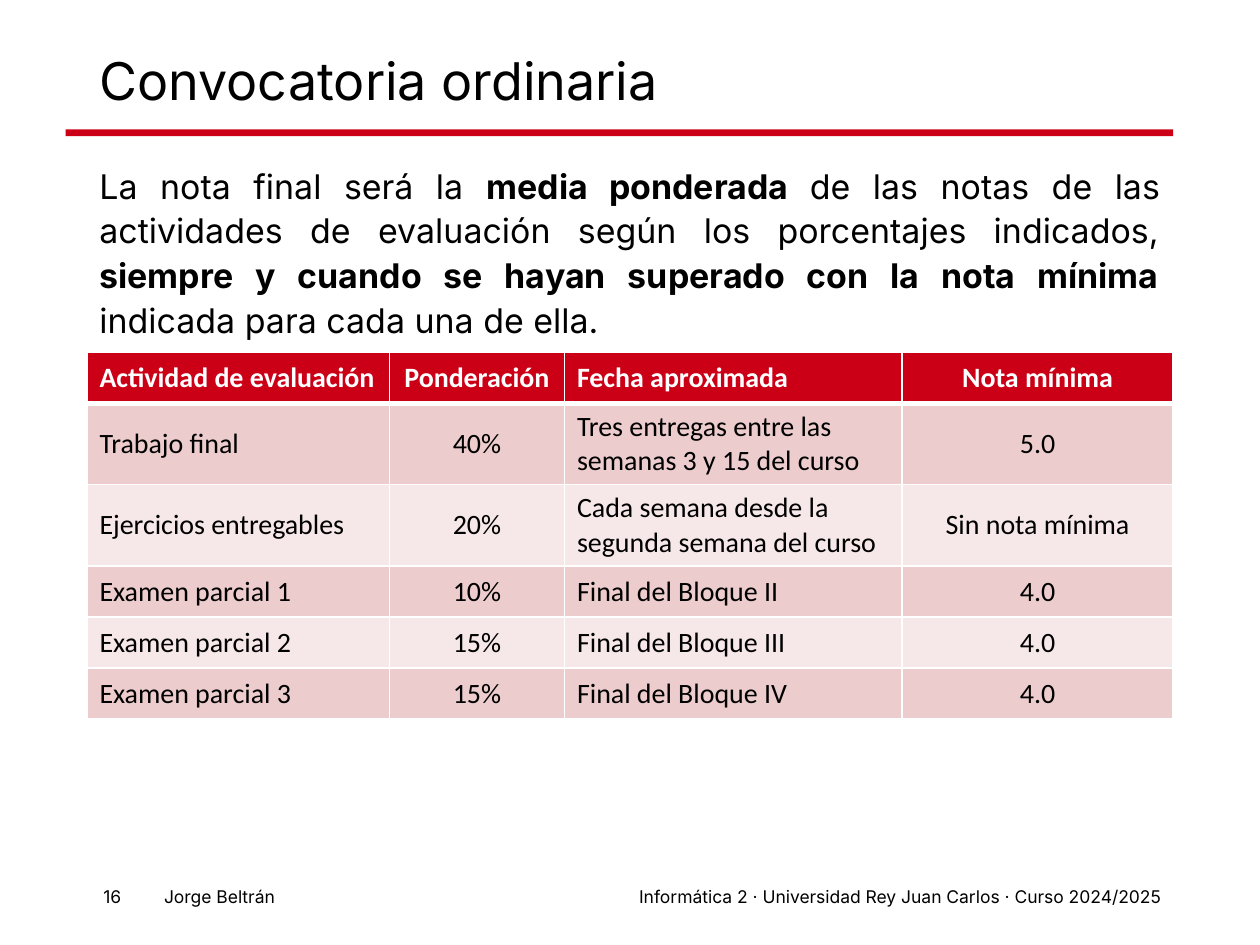
from lxml import etree
from pptx import Presentation
from pptx.dml.color import RGBColor
from pptx.enum.shapes import MSO_SHAPE
from pptx.enum.text import MSO_ANCHOR, PP_ALIGN
from pptx.oxml.ns import qn
from pptx.util import Inches, Pt

LEFT, CENTER, RIGHT, JUSTIFY = PP_ALIGN.LEFT, PP_ALIGN.CENTER, PP_ALIGN.RIGHT, PP_ALIGN.JUSTIFY
TOP, MIDDLE = MSO_ANCHOR.TOP, MSO_ANCHOR.MIDDLE
RECTANGLE = MSO_SHAPE.RECTANGLE
RED, BLACK, WHITE = "CB0017", "000000", "FFFFFF"
BANDS = ["ECCCCC", "F6E7E8"]

deck = Presentation()
deck.slide_width, deck.slide_height = Inches(10), Inches(7.5)
slide = deck.slides.add_slide(deck.slide_layouts[6])
col, row = deck.slide_width / 100, deck.slide_height / 100
margin, content = 6.9, 86.2


def color(hex_code):
    return RGBColor.from_string(hex_code)


def write(frame, text, size=10, font="Inter", ink=BLACK, bold=False,
          align=LEFT, anchor=TOP, spacing=1.0, before=0):
    frame.word_wrap = True
    frame.vertical_anchor = anchor
    paragraph = frame.paragraphs[0]
    paragraph.alignment = align
    paragraph.line_spacing = spacing
    paragraph.space_before = Pt(before)
    for index, piece in enumerate(text.split("**")):
        if piece:
            run = paragraph.add_run()
            run.text = piece
            run.font.size, run.font.name = Pt(size), font
            run.font.bold = bold or index % 2 == 1
            run.font.color.rgb = color(ink)


rule = slide.shapes.add_shape(RECTANGLE, int(5.2 * col), int(13.7 * row), int(87.9 * col), int(0.7 * row))
rule.shadow.inherit = False
rule.fill.solid()
rule.fill.fore_color.rgb = color(RED)
rule.line.fill.background()

explanation = (
    "La nota final será la **media ponderada **de las notas de las actividades de evaluación "
    "según los porcentajes indicados, **siempre y cuando se hayan superado con la nota mínima "
    "**indicada para cada una de ella. "
)
footer = dict(top=93.1, height=3.6, align=RIGHT)
passages = [
    dict(text="Informática 2 · Universidad Rey Juan Carlos · Curso 2024/2025", left=25.3, width=67.8, **footer),
    dict(text="16", left=5.8, width=4.8, **footer),
    dict(text="Jorge Beltrán", left=2.1, width=20.7, **footer),
    dict(text="Convocatoria ordinaria", left=margin, top=5.3, width=content, height=7,
         size=29.7, anchor=MIDDLE, spacing=0.9),
    dict(text=explanation, left=margin, top=16.4, width=content, height=15.3,
         size=19.4, align=JUSTIFY, spacing=1.1, before=7.5),
]
for passage in passages:
    left, width = (int(passage.pop(side) * col) for side in ("left", "width"))
    top, height = (int(passage.pop(side) * row) for side in ("top", "height"))
    write(slide.shapes.add_textbox(left, top, width, height).text_frame, **passage)

assessments = [
    ["Actividad de evaluación", "Ponderación", "Fecha aproximada", "Nota mínima"],
    ["Trabajo final", "40%", "Tres entregas entre las semanas 3 y 15 del curso", "5.0"],
    ["Ejercicios entregables", "20%", "Cada semana desde la segunda semana del curso", "Sin nota mínima"],
    ["Examen parcial 1", "10%", "Final del Bloque II", "4.0"],
    ["Examen parcial 2", "15%", "Final del Bloque III", "4.0"],
    ["Examen parcial 3", "15%", "Final del Bloque IV", "4.0"],
]
column_shares = [24, 13.9, 26.8, 21.5]
row_shares = [5.4, 8.6, 8.6, 5.4, 5.4, 5.4]
grades = slide.shapes.add_table(
    len(row_shares), len(column_shares), int(margin * col), int(37.3 * row),
    int(content * col), int(sum(row_shares) * row)).table
for grid_column, share in zip(grades.columns, column_shares):
    grid_column.width = int(share * col)
for grid_row, share in zip(grades.rows, row_shares):
    grid_row.height = int(share * row)

for r, values in enumerate(assessments):
    heading = r == 0
    for c, value in enumerate(values):
        cell = grades.cell(r, c)
        write(cell.text_frame, value, size=16, font="Calibri", bold=heading,
              ink=WHITE if heading else BLACK, align=CENTER if c % 2 else LEFT)
        cell.vertical_anchor = MIDDLE
        properties = cell._tc.get_or_add_tcPr()
        for edge in ("lnL", "lnR", "lnT", "lnB"):
            thick = (heading and edge == "lnB") or (r == 1 and edge == "lnT")
            border = etree.SubElement(properties, qn(f"a:{edge}"), w=str(Pt(3 if thick else 1)))
            border_fill = etree.SubElement(border, qn("a:solidFill"))
            etree.SubElement(border_fill, qn("a:srgbClr"), val=WHITE)
        cell.fill.solid()
        cell.fill.fore_color.rgb = color(RED if heading else BANDS[(r - 1) % 2])

deck.save("out.pptx")
